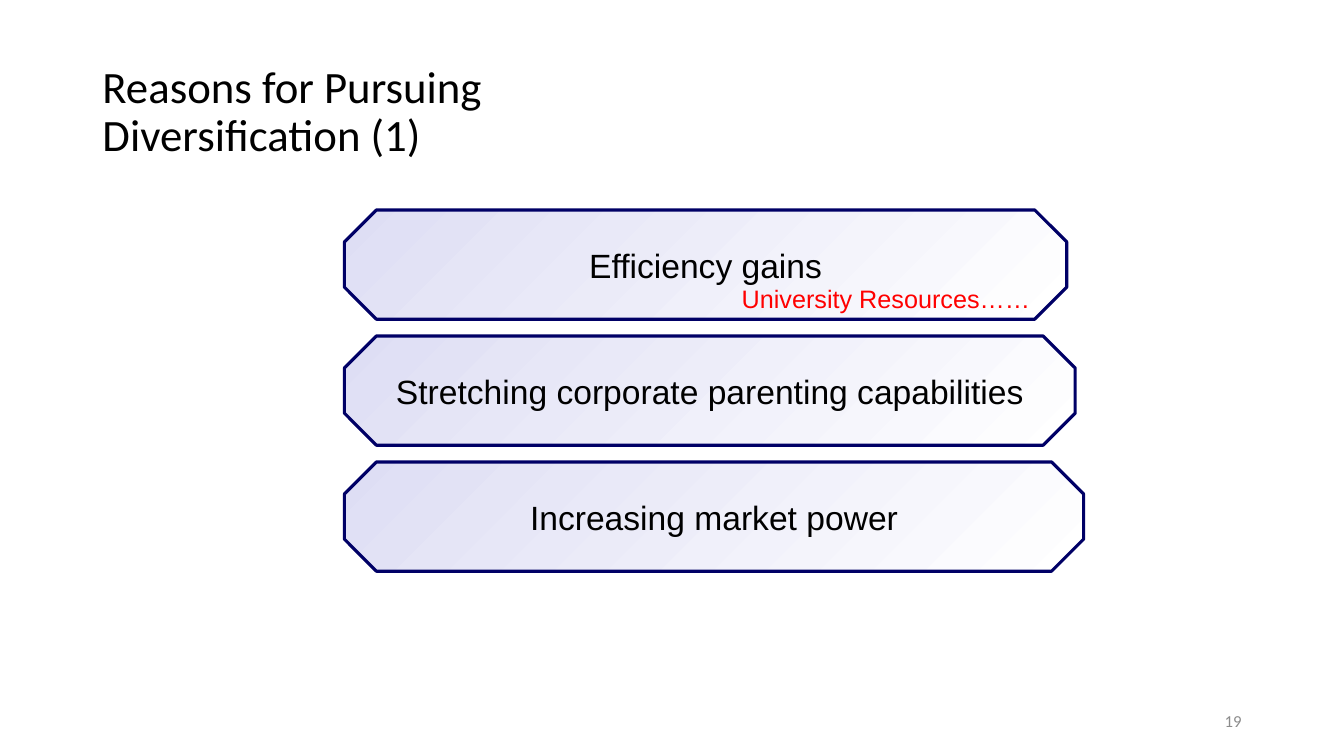
"""Build the slide on reasons for pursuing diversification."""
from typing import NamedTuple

import pptx
import pptx.dml.color
import pptx.enum.shapes
import pptx.enum.text
import pptx.util

PX = 9525
COLORS = {"text": "000000", "note": "FF0000", "number": "8C8C8C",
          "edge": "000066", "tint": "DEDEF4", "white": "FFFFFF"}
ALIGN = pptx.enum.text.PP_ALIGN
ANCHOR = pptx.enum.text.MSO_ANCHOR
REASON_LEFT, REASON_TOP, REASON_STEP, REASON_HEIGHT = 328, 200, 120, 104


class Box(NamedTuple):
    left: int
    top: int
    width: int
    height: int

    def emu(self) -> list[int]:
        return [v * PX for v in self]


class Style(NamedTuple):
    size: int
    font: str
    color: str
    align: ALIGN = ALIGN.LEFT


class Label(NamedTuple):
    text: str
    box: Box
    style: Style
    anchor: ANCHOR


REASONS = ["Efficiency gains", "Stretching corporate parenting capabilities",
           "Increasing market power"]
REASON_STYLE = Style(24, "Arial", "text", ALIGN.CENTER)
TITLE_LINES = ["Reasons for Pursuing ", "Diversification (1)"]
TITLE_STYLE = Style(32, "Calibri", "text")
LABELS = [
    Label("University Resources……", Box(697, 265, 344, 38),
          Style(18, "Arial", "note"), ANCHOR.TOP),
    Label("19", Box(904, 667, 288, 38),
          Style(12, "Calibri", "number", ALIGN.RIGHT), ANCHOR.MIDDLE),
]


def rgb(name: str) -> pptx.dml.color.RGBColor:
    return pptx.dml.color.RGBColor.from_string(COLORS[name])


def write(tf: pptx.text.text.TextFrame, lines: list[str], style: Style) -> None:
    p = tf.paragraphs[0]
    p.alignment = style.align
    for i, line in enumerate(lines):
        if i:
            p.add_line_break()
        r = p.add_run()
        r.text = line
        r.font.size = pptx.util.Pt(style.size)
        r.font.name = style.font
        r.font.color.rgb = rgb(style.color)


def set_title(sp: pptx.shapes.placeholder.SlidePlaceholder) -> None:
    sp.left, sp.top, sp.width, sp.height = Box(88, 38, 1104, 139).emu()
    tf = sp.text_frame
    tf.auto_size = pptx.enum.text.MSO_AUTO_SIZE.NONE
    tf.vertical_anchor = ANCHOR.MIDDLE
    write(tf, TITLE_LINES, TITLE_STYLE)
    tf.paragraphs[0].line_spacing = 0.9


def add_reason(slide: pptx.slide.Slide, text: str, box: Box) -> None:
    sp = slide.shapes.add_shape(pptx.enum.shapes.MSO_SHAPE.OCTAGON, *box.emu())
    sp.adjustments[0] = 0.293
    sp.shadow.inherit = False
    sp.fill.gradient()
    sp.fill.gradient_angle = 315
    for stop, name in zip(sp.fill.gradient_stops, ("tint", "white")):
        stop.color.rgb = rgb(name)
    sp.line.color.rgb = rgb("edge")
    sp.line.width = pptx.util.Pt(2.25)
    tf = sp.text_frame
    tf.word_wrap = False
    tf.vertical_anchor = ANCHOR.MIDDLE
    write(tf, [text], REASON_STYLE)


def add_label(slide: pptx.slide.Slide, label: Label) -> None:
    tf = slide.shapes.add_textbox(*label.box.emu()).text_frame
    tf.word_wrap = True
    tf.vertical_anchor = label.anchor
    write(tf, [label.text], label.style)


def main() -> None:
    prs = pptx.Presentation()
    prs.slide_width, prs.slide_height = 1280 * PX, 720 * PX
    slide = prs.slides.add_slide(prs.slide_layouts.get_by_name("Title Only"))
    set_title(slide.shapes.title)
    for i, text in enumerate(REASONS):
        add_reason(slide, text, Box(REASON_LEFT, REASON_TOP + i * REASON_STEP,
                                    688 + i * 8, REASON_HEIGHT))
    for label in LABELS:
        add_label(slide, label)
    prs.save("out.pptx")


if __name__ == "__main__":
    main()
